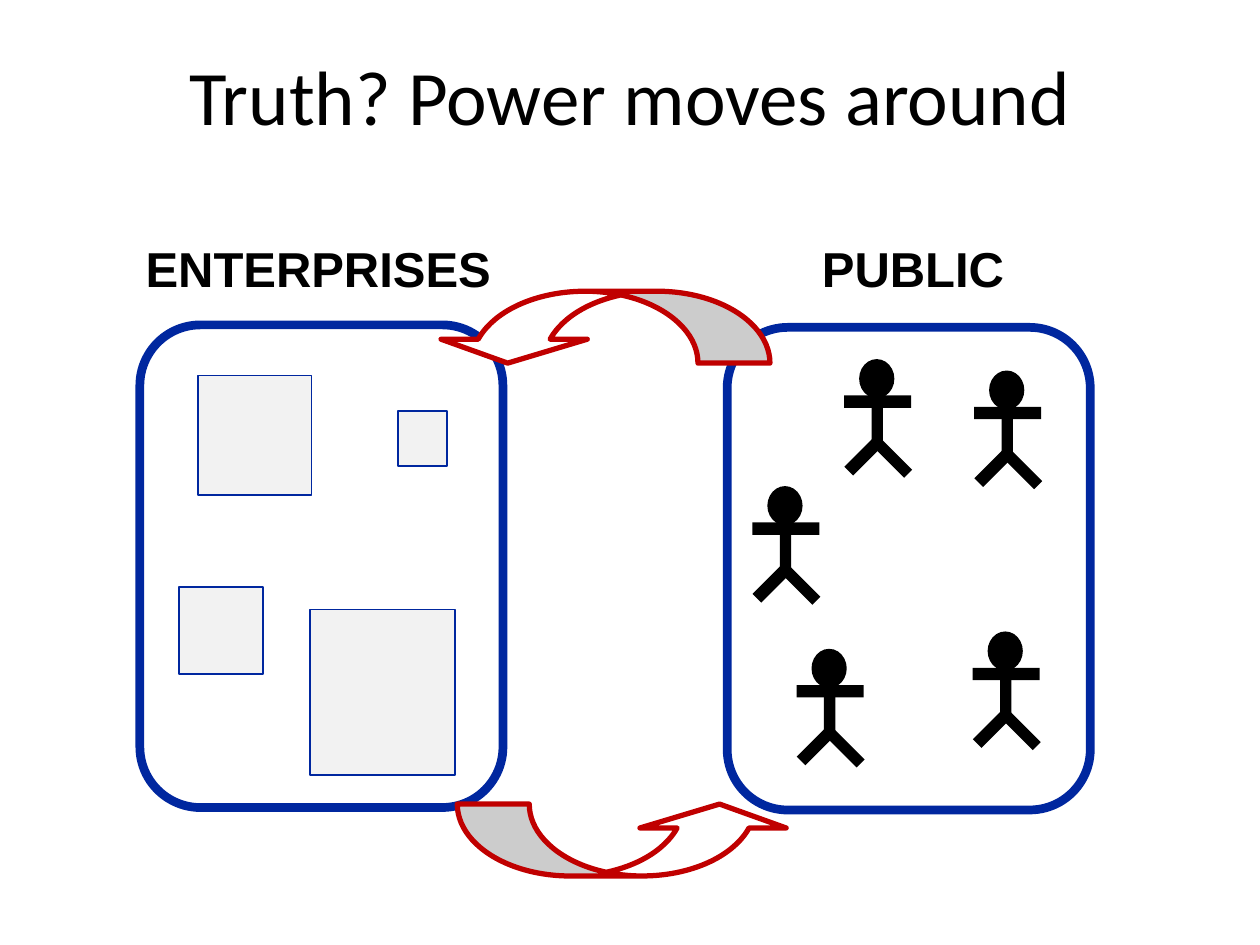
from pptx import Presentation
from pptx.dml.color import RGBColor
from pptx.enum.shapes import MSO_SHAPE
from pptx.enum.text import MSO_ANCHOR, MSO_AUTO_SIZE, PP_ALIGN
from pptx.util import Cm, Pt

BLACK = RGBColor(0x00, 0x00, 0x00)
WHITE = RGBColor(0xFF, 0xFF, 0xFF)
GREY = RGBColor(0xF2, 0xF2, 0xF2)
BLUE = RGBColor(0x00, 0x27, 0x9F)
RED = RGBColor(0xC0, 0x00, 0x00)

PANELS = [(2.82, 6.55), (14.66, 6.6)]
ENTERPRISES = [
    (3.99, 7.57, 2.29, 2.41),
    (8.03, 8.28, 0.99, 1.12),
    (6.25, 12.29, 2.92, 3.33),
    (3.61, 11.84, 1.7, 1.75),
]
PEOPLE = [(17.32, 7.24), (19.94, 7.47), (15.47, 9.8), (16.36, 13.08), (19.91, 12.73)]
# Offset from the top left of the head, size, rotation
LIMBS = [
    (-0.05, 1.57, 0.25, 0.81, 45),
    (0.56, 1.55, 0.23, 0.89, 315),
    (0.25, 0.89, 0.23, 0.89, 0),
    (0.25, 0.18, 0.25, 1.35, 270),
]
ARROWS = [(9.22, 16.21, 0), (8.76, 5.87, 180)]
LABELS = [("PUBLIC", 14.33), ("ENTERPRISES", 2.34)]


class SlideBuilder:
    def __init__(self, page):
        self.page = page

    def add_text(self, frame, text, font, size, bold=False):
        para = frame.paragraphs[0]
        para.alignment = PP_ALIGN.CENTER
        span = para.add_run()
        span.text = text
        span.font.name = font
        span.font.size = Pt(size)
        span.font.bold = bold
        span.font.color.rgb = BLACK

    def title(self, text):
        box = self.page.shapes.title
        box.left, box.top, box.width, box.height = Cm(1.27), Cm(0.76), Cm(22.86), Cm(3.18)
        box.text_frame.vertical_anchor = MSO_ANCHOR.TOP
        box.text_frame.margin_top = Cm(0.22)
        self.add_text(box.text_frame, text, "Calibri", 44)

    def label(self, text, left):
        box = self.page.shapes.add_textbox(Cm(left), Cm(4.65), Cm(8.15), Cm(1.5))
        frame = box.text_frame
        frame.word_wrap = True
        frame.auto_size = MSO_AUTO_SIZE.SHAPE_TO_FIT_TEXT
        frame.margin_left = frame.margin_right = Cm(0.15)
        frame.margin_top = frame.margin_bottom = Cm(0.15)
        self.add_text(frame, text, "Arial", 28, bold=True)

    def shape(self, kind, left, top, width, height, fill, line=None, weight=1,
              rotation=0, adjustments=(), parent=None):
        """Draw a preset shape on the slide, or inside the parent group."""
        shapes = (parent or self.page).shapes
        shape = shapes.add_shape(kind, Cm(left), Cm(top), Cm(width), Cm(height))
        shape.shadow.inherit = False
        shape.rotation = rotation
        shape.fill.solid()
        shape.fill.fore_color.rgb = fill
        if line is None:
            shape.line.fill.background()
        else:
            shape.line.color.rgb = line
            shape.line.width = Pt(weight)
        for index, value in enumerate(adjustments):
            shape.adjustments[index] = value

    def panel(self, left, top):
        self.shape(MSO_SHAPE.ROUNDED_RECTANGLE, left, top, 7.32, 9.73, WHITE, BLUE, 5,
                   adjustments=[0.167])

    def enterprise(self, left, top, width, height):
        self.shape(MSO_SHAPE.RECTANGLE, left, top, width, height, GREY, BLUE)

    def person(self, left, top):
        group = self.page.shapes.add_group_shape()
        for dx, dy, width, height, rotation in LIMBS:
            self.shape(MSO_SHAPE.RECTANGLE, left + dx, top + dy, width, height, BLACK,
                       rotation=rotation, parent=group)
        self.shape(MSO_SHAPE.OVAL, left, top, 0.71, 0.79, BLACK, parent=group)

    def arrow(self, left, top, rotation):
        self.shape(MSO_SHAPE.CURVED_UP_ARROW, left, top, 6.76, 1.45, WHITE, RED, 3,
                   rotation, adjustments=[1.016, 2.033, 0.333])


def main():
    deck = Presentation()
    deck.slide_width, deck.slide_height = Cm(25.4), Cm(19.05)
    builder = SlideBuilder(deck.slides.add_slide(deck.slide_layouts[5]))
    builder.title("Truth? Power moves around")
    for panel in PANELS:
        builder.panel(*panel)
    for enterprise in ENTERPRISES:
        builder.enterprise(*enterprise)
    for person in PEOPLE:
        builder.person(*person)
    for label in LABELS:
        builder.label(*label)
    for arrow in ARROWS:
        builder.arrow(*arrow)
    deck.save("out.pptx")


if __name__ == "__main__":
    main()
